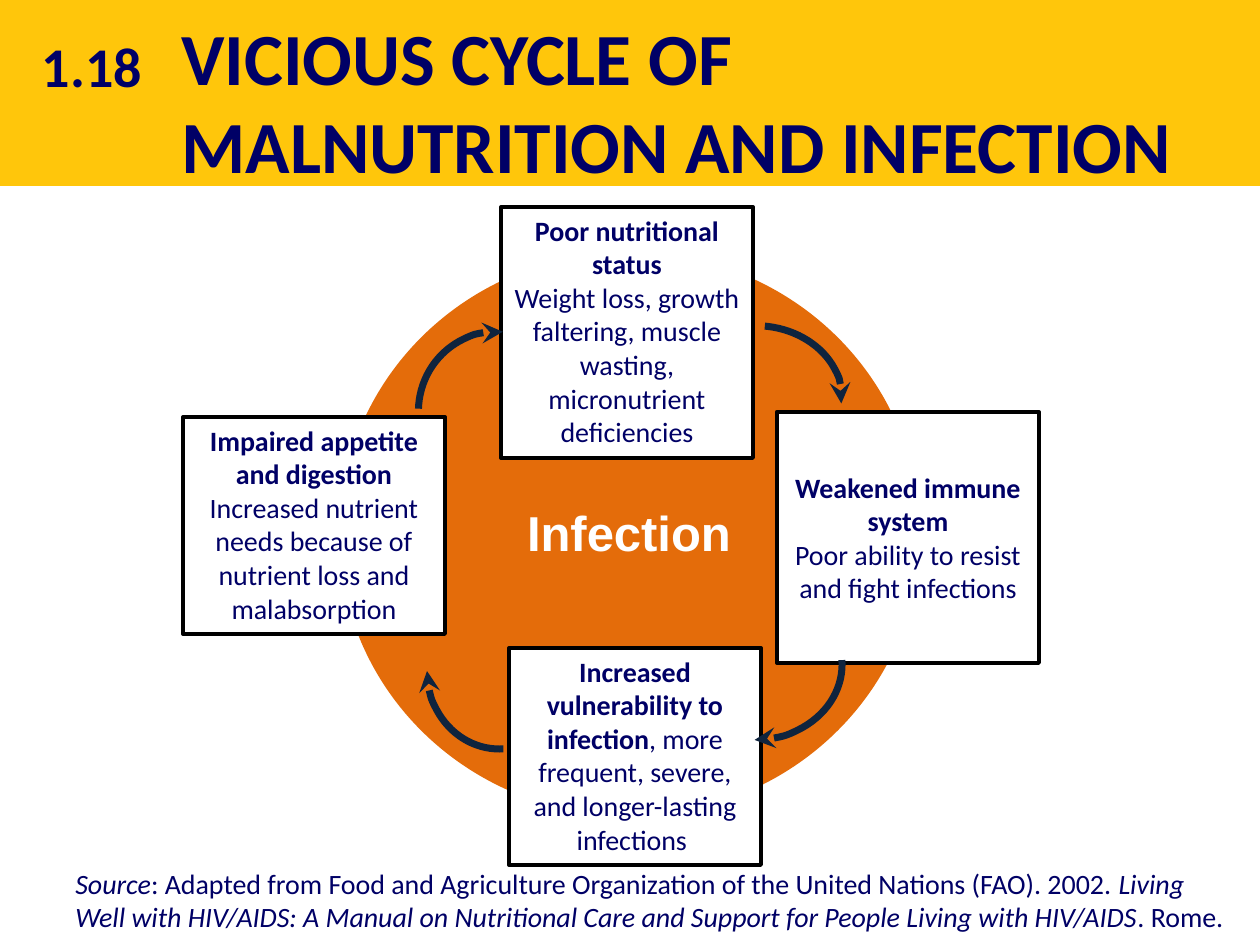
from dataclasses import dataclass
from typing import NamedTuple

from lxml.etree import SubElement
from pptx import Presentation
from pptx.dml.color import RGBColor
from pptx.enum.shapes import MSO_SHAPE
from pptx.enum.text import MSO_ANCHOR, MSO_AUTO_SIZE, PP_ALIGN
from pptx.oxml.ns import qn
from pptx.util import Emu, Pt

EMU_PER_PX = 914400 / 126


@dataclass(frozen=True)
class Theme:
    navy: RGBColor = RGBColor(0x00, 0x00, 0x66)
    yellow: RGBColor = RGBColor(0xFF, 0xC6, 0x0B)
    orange: RGBColor = RGBColor(0xE4, 0x6C, 0x0A)
    arrow: RGBColor = RGBColor(0x0F, 0x24, 0x3E)
    black: RGBColor = RGBColor(0x00, 0x00, 0x00)
    white: RGBColor = RGBColor(0xFF, 0xFF, 0xFF)
    body_font: str = "Calibri"
    hub_font: str = "Arial"
    title_size: int = 42
    number_size: int = 32
    hub_size: int = 28
    body_size: int = 16
    box_line: float = 2.25
    arrow_line: float = 4


THEME = Theme()


class Area(NamedTuple):
    left: int
    top: int
    width: int
    height: int


class Span(NamedTuple):
    text: str
    bold: bool = False
    italic: bool = False


class Style(NamedTuple):
    size: int = THEME.body_size
    font: str = THEME.body_font
    color: RGBColor = THEME.navy
    align: PP_ALIGN = PP_ALIGN.CENTER


Paragraphs = list[list[Span]]


class Stage(NamedTuple):
    area: Area
    paragraphs: Paragraphs
    anchor: MSO_ANCHOR = MSO_ANCHOR.TOP


class CycleArrow(NamedTuple):
    area: Area
    rotation: float


STAGES = [
    Stage(Area(501, 207, 252, 251), [
        [Span("Poor nutritional status", bold=True)],
        [Span("Weight loss, growth faltering, muscle wasting, micronutrient deficiencies")]]),
    Stage(Area(509, 648, 252, 217), [
        [Span("Increased vulnerability to infection", bold=True),
         Span(", more frequent, severe, and longer-lasting infections ")]]),
    Stage(Area(183, 417, 262, 217), [
        [Span("Impaired appetite and digestion", bold=True)],
        [Span("Increased nutrient needs because of nutrient loss and malabsorption")]]),
    Stage(Area(777, 412, 262, 251), [
        [Span("Weakened immune system", bold=True)],
        [Span("Poor ability to resist and fight infections")]], MSO_ANCHOR.MIDDLE),
]

ARROWS = [
    CycleArrow(Area(678, 326, 164, 135), 7),
    CycleArrow(Area(417, 333, 159, 156), 274.6),
    CycleArrow(Area(427, 593, 145, 156), 180),
    CycleArrow(Area(679, 577, 151, 175), 90),
]

CITATION = [
    Span("Source", italic=True),
    Span(": Adapted from Food and Agriculture Organization of the United Nations (FAO). 2002. "),
    Span("Living Well with HIV/AIDS: A Manual on Nutritional Care and Support "
         "for People Living with HIV/AIDS", italic=True),
    Span(". Rome."),
]


def px(length: int) -> Emu:
    return Emu(round(length * EMU_PER_PX))


def emu(area: Area) -> list[Emu]:
    return [px(length) for length in area]


def write(frame, paragraphs: Paragraphs, style: Style) -> None:
    """Fill a text frame, formatting runs only where they differ."""
    for index, spans in enumerate(paragraphs):
        paragraph = frame.add_paragraph() if index else frame.paragraphs[0]
        paragraph.alignment = style.align
        font = paragraph.font
        font.name, font.size = style.font, Pt(style.size)
        font.color.rgb = style.color
        mixed = len({(span.bold, span.italic) for span in spans}) > 1
        if not mixed:
            font.bold, font.italic = spans[0].bold, spans[0].italic
        for span in spans:
            run = paragraph.add_run()
            run.text = span.text
            if mixed:
                run.font.bold, run.font.italic = span.bold, span.italic


def add_text(slide, area: Area, paragraphs: Paragraphs, style: Style,
             wrap: bool = True, grow: bool = True):
    frame = slide.shapes.add_textbox(*emu(area)).text_frame
    frame.word_wrap = wrap
    frame.auto_size = MSO_AUTO_SIZE.SHAPE_TO_FIT_TEXT if grow else MSO_AUTO_SIZE.NONE
    write(frame, paragraphs, style)
    return frame


def add_plain(slide, kind: MSO_SHAPE, area: Area, fill: RGBColor):
    """Add a filled preset shape without outline or shadow."""
    shape = slide.shapes.add_shape(kind, *emu(area))
    shape.shadow.inherit = False
    shape.fill.solid()
    shape.fill.fore_color.rgb = fill
    shape.line.fill.background()
    return shape


def add_stage(slide, stage: Stage) -> None:
    box = add_plain(slide, MSO_SHAPE.RECTANGLE, stage.area, THEME.white)
    box.line.color.rgb = THEME.black
    box.line.width = Pt(THEME.box_line)
    frame = box.text_frame
    frame.word_wrap = True
    frame.auto_size = MSO_AUTO_SIZE.SHAPE_TO_FIT_TEXT
    frame.vertical_anchor = stage.anchor
    write(frame, stage.paragraphs, Style())


def add_cycle_arrow(slide, arrow: CycleArrow) -> None:
    arc = slide.shapes.add_shape(MSO_SHAPE.ARC, *emu(arrow.area))
    arc.shadow.inherit = False
    arc.fill.background()
    arc.adjustments[0] = 160.29
    arc.rotation = arrow.rotation
    arc.line.color.rgb = THEME.arrow
    arc.line.width = Pt(THEME.arrow_line)
    SubElement(arc.line._get_or_add_ln(), qn("a:tailEnd"), type="stealth")


def main() -> None:
    deck = Presentation()
    deck.slide_width, deck.slide_height = px(1260), px(945)
    slide = deck.slides.add_slide(deck.slide_layouts[6])

    add_plain(slide, MSO_SHAPE.RECTANGLE, Area(0, 0, 1260, 186), THEME.yellow)
    add_text(slide, Area(169, 6, 1031, 76),
             [[Span("VICIOUS CYCLE OF MALNUTRITION AND INFECTION", bold=True)]],
             Style(THEME.title_size, align=PP_ALIGN.LEFT), grow=False)
    add_text(slide, Area(29, 25, 126, 81), [[Span("1.18", bold=True)]],
             Style(THEME.number_size), wrap=False)

    add_plain(slide, MSO_SHAPE.OVAL, Area(339, 252, 581, 564), THEME.orange)
    for stage in STAGES:
        add_stage(slide, stage)
    add_text(slide, Area(503, 496, 252, 72), [[Span("Infection", bold=True)]],
             Style(THEME.hub_size, THEME.hub_font, THEME.white))
    for arrow in ARROWS:
        add_cycle_arrow(slide, arrow)

    citation = add_text(slide, Area(0, 860, 1250, 81), [CITATION],
                        Style(align=PP_ALIGN.LEFT))
    indent = citation.paragraphs[0]._p.get_or_add_pPr()
    indent.set("marL", str(px(63)))
    indent.set("indent", "0")

    deck.save("out.pptx")


if __name__ == "__main__":
    main()
